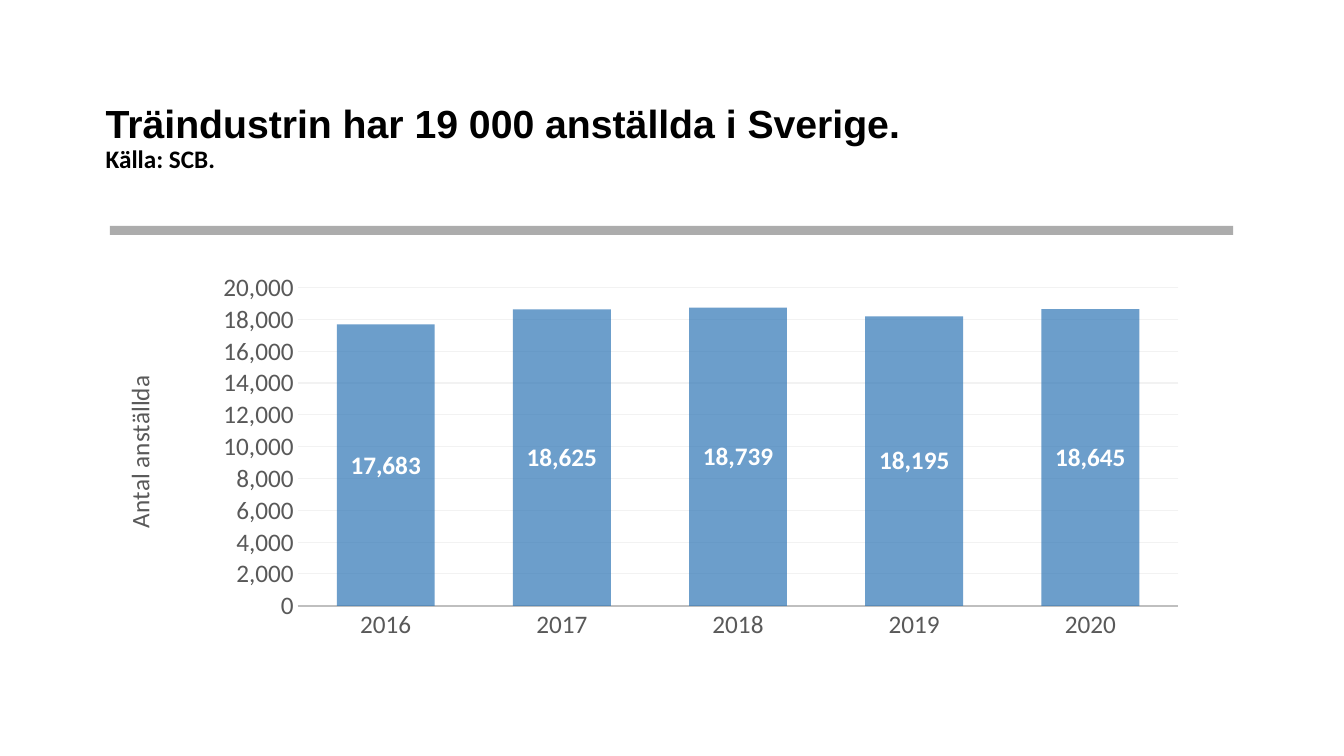
"""Build a slide with a column chart of employment in the Swedish wood industry."""
import pptx
import pptx.chart.data
import pptx.dml.color
import pptx.enum.chart
import pptx.enum.shapes
import pptx.enum.text
import pptx.oxml
import pptx.oxml.ns
import pptx.util
from pptx.util import Inches

EMPLOYEES = {"2016": 17683, "2017": 18625, "2018": 18739, "2019": 18195, "2020": 18645}


def color(code):
    return pptx.dml.color.RGBColor.from_string(code)


def format_font(font, size=18, name="Calibri", ink="595959", bold=False):
    font.size = pptx.util.Pt(size)
    font.name = name
    font.bold = bold
    font.color.rgb = color(ink)


def write(para, text, **style):
    span = para.add_run()
    span.text = text
    format_font(span.font, **style)


def paint(fill, code, opacity):
    fill.solid()
    fill.fore_color.rgb = color(code)
    tint = next(fill._xPr.iter(pptx.oxml.ns.qn("a:srgbClr")))
    tint.append(pptx.oxml.parse_xml(
        f'<a:alpha {pptx.oxml.ns.nsdecls("a")} val="{opacity * 1000}"/>'))


def draw_line(line, code, width):
    line.color.rgb = color(code)
    line.width = pptx.util.Pt(width)


def set_layout(element, index, **values):
    for old in element.findall(pptx.oxml.ns.qn("c:layout")):
        element.remove(old)
    settings = "".join(f'<c:{key} val="{value}"/>' for key, value in values.items())
    element.insert(index, pptx.oxml.parse_xml(
        f'<c:layout {pptx.oxml.ns.nsdecls("c")}>'
        f"<c:manualLayout>{settings}</c:manualLayout></c:layout>"))


class Slide:
    def __init__(self, deck):
        self.page = deck.slides.add_slide(deck.slide_layouts[6])
        self.number_format = "#,##0"

    def heading(self, title, source, left, top, width, height):
        box = self.page.shapes.add_textbox(left, top, width, height)
        frame = box.text_frame
        frame.word_wrap = True
        frame.vertical_anchor = pptx.enum.text.MSO_ANCHOR.MIDDLE
        para = frame.paragraphs[0]
        para.line_spacing = 0.9
        write(para, title, size=28, name="Arial", ink="000000", bold=True)
        para.add_line_break()
        write(para, source, ink="000000", bold=True)

    def bar(self, left, top, width, height):
        shape = self.page.shapes.add_shape(
            pptx.enum.shapes.MSO_SHAPE.RECTANGLE, left, top, width, height)
        shape.shadow.inherit = False
        shape.line.fill.background()
        paint(shape.fill, "808080", 65)

    def column_chart(self, values, axis_title, left, top, width, height):
        data = pptx.chart.data.CategoryChartData(number_format=self.number_format)
        data.categories = list(values)
        data.add_series("Series 1", list(values.values()))
        chart = self.page.shapes.add_chart(
            pptx.enum.chart.XL_CHART_TYPE.COLUMN_CLUSTERED,
            left, top, width, height, data).chart
        format_font(chart.font)
        chart.has_title = False
        chart.has_legend = False
        set_layout(chart._chartSpace.chart.plotArea, 0, layoutTarget="inner",
                   xMode="edge", yMode="edge", x=0.184, y=0.053, w=0.803, h=0.75)
        self.style_columns(chart.plots[0])
        self.style_axes(chart, axis_title)

    def style_columns(self, plot):
        plot.vary_by_categories = False
        plot.gap_width = 80
        plot.overlap = 25
        series = plot.series[0]
        paint(series.format.fill, "2E75B6", 70)
        labels = series.data_labels
        labels.show_value = True
        labels.position = pptx.enum.chart.XL_LABEL_POSITION.CENTER
        labels.number_format = self.number_format
        labels.number_format_is_linked = False
        format_font(labels.font, ink="FFFFFF", bold=True)

    def style_axes(self, chart, title):
        years, amounts = chart.category_axis, chart.value_axis
        for axis in (years, amounts):
            axis.major_tick_mark = pptx.enum.chart.XL_TICK_MARK.NONE
            axis.minor_tick_mark = pptx.enum.chart.XL_TICK_MARK.NONE
            format_font(axis.tick_labels.font)
        draw_line(years.format.line, "BFBFBF", 1.25)
        amounts.format.line.fill.background()
        amounts.minimum_scale = 0
        amounts.maximum_scale = 20000
        amounts.major_unit = 2000
        amounts.tick_labels.number_format = self.number_format
        amounts.tick_labels.number_format_is_linked = False
        draw_line(amounts.major_gridlines.format.line, "F2F2F2", 0.75)
        frame = amounts.axis_title.text_frame
        write(frame.paragraphs[0], title)
        element = amounts.axis_title._element
        body = next(element.iter(pptx.oxml.ns.qn("a:bodyPr")))
        body.set("rot", "-5400000")
        body.set("vert", "horz")
        set_layout(element, 1, xMode="edge", yMode="edge", x=0.02, y=0.25)


def main():
    deck = pptx.Presentation()
    deck.slide_width = Inches(13.33)
    deck.slide_height = Inches(7.5)
    slide = Slide(deck)
    slide.heading("Träindustrin har 19 000 anställda i Sverige.", "Källa: SCB.",
                  Inches(0.95), Inches(0.66), Inches(11.43), Inches(1.45))
    slide.bar(Inches(1.09), Inches(2.24), Inches(11.14), Inches(0.09))
    slide.column_chart(EMPLOYEES, "Antal anställda",
                       Inches(0.95), Inches(2.63), Inches(10.88), Inches(4.21))
    deck.save("out.pptx")


if __name__ == "__main__":
    main()
